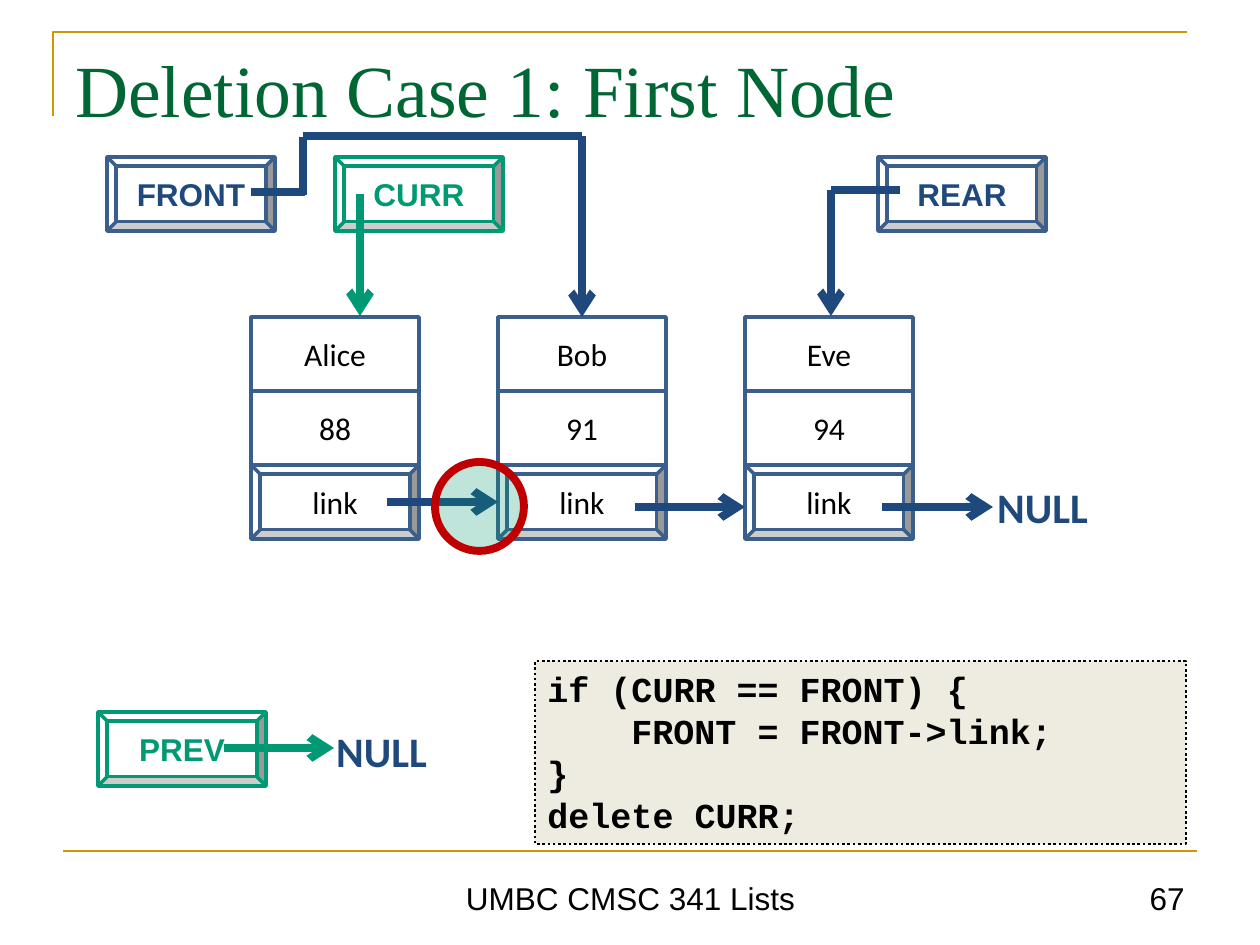
from lxml import etree
from pptx import Presentation
from pptx.dml.color import RGBColor
from pptx.enum.dml import MSO_LINE
from pptx.enum.shapes import MSO_CONNECTOR, MSO_SHAPE
from pptx.enum.text import MSO_ANCHOR, PP_ALIGN
from pptx.oxml.ns import qn
from pptx.util import Pt

SCALE = 914400 / 126
BEVEL, RECTANGLE, OVAL = MSO_SHAPE.BEVEL, MSO_SHAPE.RECTANGLE, MSO_SHAPE.OVAL
STRAIGHT = MSO_CONNECTOR.STRAIGHT
DOTTED = MSO_LINE.ROUND_DOT
TOP, MIDDLE, BOTTOM = MSO_ANCHOR.TOP, MSO_ANCHOR.MIDDLE, MSO_ANCHOR.BOTTOM
LEFT, CENTER, RIGHT = PP_ALIGN.LEFT, PP_ALIGN.CENTER, PP_ALIGN.RIGHT
TOP_SIDE, LEFT_SIDE = 0, 1

WHITE = RGBColor(0xFF, 0xFF, 0xFF)
BLACK = RGBColor(0, 0, 0)
GOLD = RGBColor(0xCC, 0x99, 0x00)
TITLE_GREEN = RGBColor(0x00, 0x66, 0x33)
GREEN = RGBColor(0x00, 0x99, 0x73)
NAVY = RGBColor(0x1F, 0x49, 0x7D)
BORDER_BLUE = RGBColor(0x3A, 0x5F, 0x8C)
RED = RGBColor(0xC0, 0x00, 0x00)
CREAM = RGBColor(0xEE, 0xEC, 0xE1)

CELL_WIDTH, CELL_HEIGHT = 168, 74
NODE_LEFT, NODE_TOP, NODE_PITCH = 251, 317, 247
NODES = [("Alice", "88"), ("Bob", "91"), ("Eve", "94")]
POINTERS = [
    ("FRONT", 107, 157, BORDER_BLUE, NAVY),
    ("CURR", 335, 157, GREEN, GREEN),
    ("REAR", 878, 157, BORDER_BLUE, NAVY),
    ("PREV", 98, 712, GREEN, GREEN),
]
CODE = [
    ("if (CURR == FRONT) {", 0),
    ("FRONT = FRONT->link;", 4),
    ("}", 0),
    ("delete CURR;", 0),
]
CODE_SIZE = 20
CODE_CHARACTER = Pt(CODE_SIZE * 0.6)


def px(length):
    return round(length * SCALE)


def box(left, top, width, height):
    return px(left), px(top), px(width), px(height)


def write(paragraph, text, font, size, color, bold=False, align=LEFT):
    paragraph.alignment = align
    run = paragraph.add_run()
    run.text = text
    run.font.name = font
    run.font.size = Pt(size)
    run.font.bold = bold
    run.font.color.rgb = color


def add_label(slide, bounds, text, font, size, color, bold=False, align=CENTER, anchor=TOP):
    frame = slide.shapes.add_textbox(*box(*bounds)).text_frame
    frame.word_wrap = True
    frame.vertical_anchor = anchor
    write(frame.paragraphs[0], text, font, size, color, bold, align)


def add_block(slide, kind, bounds, fill, line, weight):
    shape = slide.shapes.add_shape(kind, *box(*bounds))
    shape.shadow.inherit = False
    shape.fill.solid()
    shape.fill.fore_color.rgb = fill
    shape.line.color.rgb = line
    shape.line.width = Pt(weight)
    return shape


def add_cell(slide, kind, left, top, text, line=BORDER_BLUE, font="Calibri", color=BLACK, bold=False):
    shape = add_block(slide, kind, (left, top, CELL_WIDTH, CELL_HEIGHT), WHITE, line, 2)
    shape.text_frame.vertical_anchor = MIDDLE
    write(shape.text_frame.paragraphs[0], text, font, 18, color, bold, CENTER)
    return shape


def add_line(slide, start, end, color=NAVY, weight=4.5, arrow=False):
    connector = slide.shapes.add_connector(STRAIGHT, *map(px, start + end))
    connector.line.color.rgb = color
    connector.line.width = Pt(weight)
    if arrow:
        etree.SubElement(connector.line._get_or_add_ln(), qn("a:tailEnd"), type="arrow")
    etree.SubElement(connector._element.spPr, qn("a:effectLst"))
    return connector


def add_frame(slide):
    builder = slide.shapes.build_freeform(53, 116, SCALE)
    builder.add_line_segments([(53, 32), (1187, 32)], close=False)
    corner = builder.convert_to_shape()
    corner.shadow.inherit = False
    corner.fill.background()
    corner.line.color.rgb = GOLD
    corner.line.width = Pt(1.5)
    add_line(slide, (63, 851), (1197, 851), GOLD, 1.5)
    add_label(slide, (63, 38, 1133, 140), "Deletion Case 1: First Node",
              "Times New Roman", 42, TITLE_GREEN, align=LEFT)
    add_label(slide, (221, 861, 819, 62), "UMBC CMSC 341 Lists", "Arial", 18, BLACK, anchor=BOTTOM)
    add_label(slide, (903, 861, 294, 62), "67", "Arial", 18, BLACK, align=RIGHT, anchor=BOTTOM)


def add_node(slide, left, name, score):
    link = add_cell(slide, BEVEL, left, NODE_TOP + 2 * CELL_HEIGHT, "link")
    add_cell(slide, RECTANGLE, left, NODE_TOP + CELL_HEIGHT, score)
    head = add_cell(slide, RECTANGLE, left, NODE_TOP, name)
    return head, link


def add_code(slide):
    shape = add_block(slide, RECTANGLE, (535, 661, 651, 183), CREAM, BLACK, 1.5)
    shape.line.dash_style = DOTTED
    frame = shape.text_frame
    frame.vertical_anchor = TOP
    for index, (text, indent) in enumerate(CODE):
        paragraph = frame.add_paragraph() if index else frame.paragraphs[0]
        write(paragraph, text, "Courier New", CODE_SIZE, BLACK, True)
        if indent:
            paragraph._p.get_or_add_pPr().set("marL", str(indent * CODE_CHARACTER))


def add_highlight(slide):
    circle = add_block(slide, OVAL, (435, 462, 89, 89), GREEN, RED, 4.5)
    color = circle._element.spPr.find(qn("a:solidFill")).find(qn("a:srgbClr"))
    etree.SubElement(color, qn("a:alpha"), val="25000")


def main():
    presentation = Presentation()
    presentation.slide_width = px(1260)
    presentation.slide_height = px(945)
    slide = presentation.slides.add_slide(presentation.slide_layouts[6])

    add_frame(slide)
    for text, left, top, line, color in POINTERS:
        add_cell(slide, BEVEL, left, top, text, line, "Arial", color, True)
    nodes = [add_node(slide, NODE_LEFT + index * NODE_PITCH, *values)
             for index, values in enumerate(NODES)]
    bob_head, bob_link = nodes[1]

    add_line(slide, (360, 194), (360, 316), GREEN, arrow=True)
    add_line(slide, (224, 748), (334, 748), GREEN, arrow=True)
    add_line(slide, (387, 502), (498, 502), arrow=True).end_connect(bob_link, LEFT_SIDE)
    add_line(slide, (635, 507), (745, 507), arrow=True)
    add_line(slide, (882, 507), (993, 507), arrow=True)
    for left, top in ((284, 719), (945, 475)):
        add_label(slide, (left, top, 195, 64), "NULL", "Calibri", 24, NAVY, True)

    add_line(slide, (831, 190), (831, 316), arrow=True)
    add_line(slide, (900, 190), (831, 190))
    add_code(slide)
    add_highlight(slide)

    add_line(slide, (582, 136), (582, 317), arrow=True).end_connect(bob_head, TOP_SIDE)
    add_line(slide, (303, 136), (582, 136))
    add_line(slide, (303, 195), (303, 137))
    add_line(slide, (251, 192), (305, 192))

    presentation.save("out.pptx")


if __name__ == "__main__":
    main()
